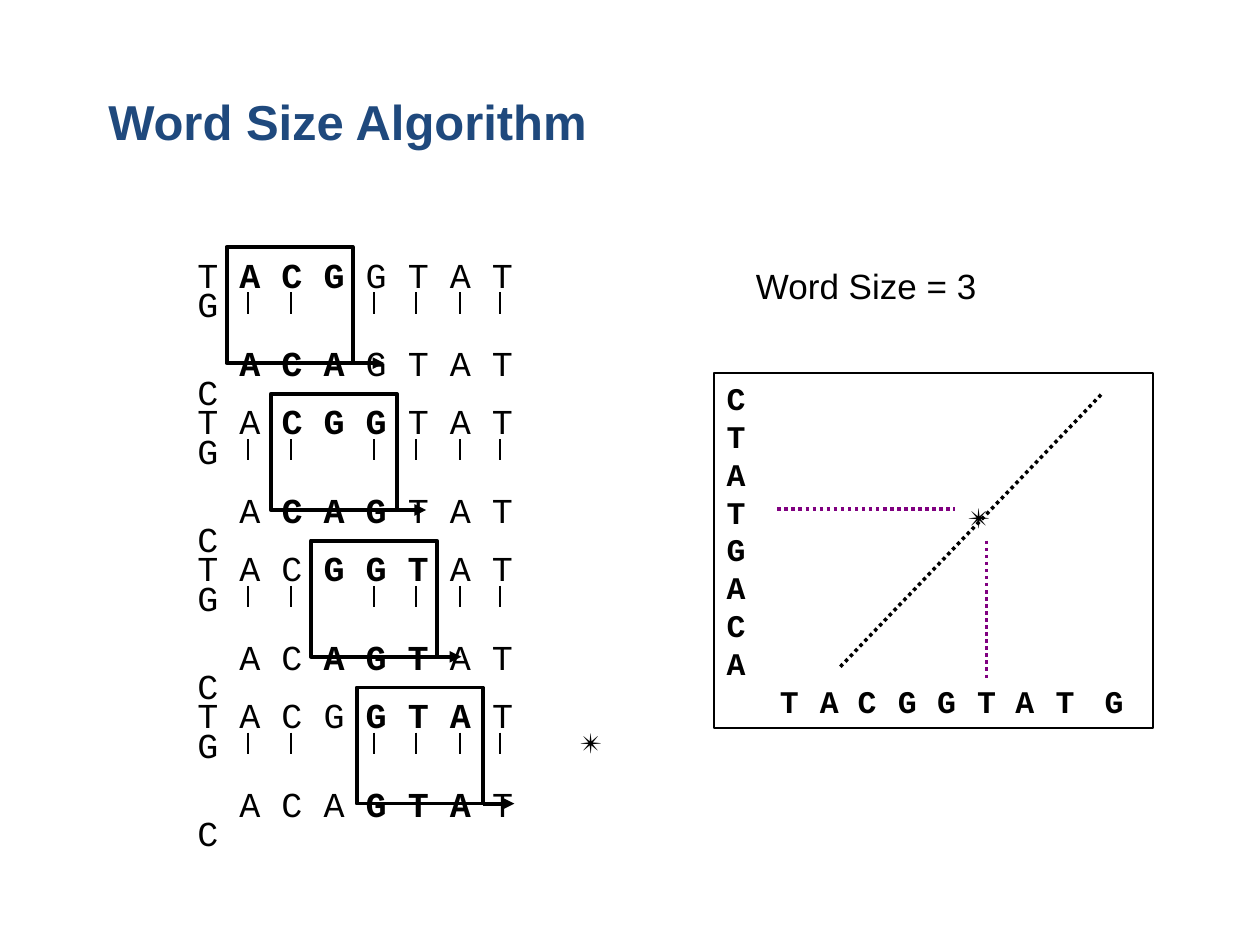
"""Build the Word Size Algorithm slide: sliding windows and a dot plot."""
from lxml.etree import SubElement
from pptx import Presentation
from pptx.dml.color import RGBColor
from pptx.enum.dml import MSO_LINE_DASH_STYLE as Dash
from pptx.enum.shapes import MSO_CONNECTOR as Link, MSO_SHAPE as Shape
from pptx.enum.text import MSO_ANCHOR as Anchor, PP_ALIGN as Align
from pptx.oxml.ns import qn
from pptx.util import Cm, Pt

TITLE = "Word Size Algorithm"
NOTE = "Word Size = 3"
TOP, LOW = "TACGGTATG", "ACAGTATC"
SIDE = "CTATGACA"
STAR = "✴"
MONO, SANS = "Courier New", "Arial"
BLACK, BLUE, PLUM = "000000", "1F497D", "800080"
SIZE = 3
PITCH = 2.96
WINDOWS = [(4.57, 7.11), (5.46, 7.95), (6.27, 8.66), (7.19, 9.73)]
TICKS = [5, 5.87, 7.54, 8.38, 9.27, 10.08]
STOPS = [1.07, 1.88, 2.64, 3.45, 4.24, 5.05, 5.82, 6.63]
DOTS = [((16.94, 13.44), (22.23, 7.92), BLACK),
        ((15.67, 10.26), (19.25, 10.26), PLUM),
        ((19.89, 10.9), (19.89, 13.67), PLUM)]
STARS = [(11.43, 14.5), (19.25, 9.96)]

deck = Presentation()
deck.slide_width, deck.slide_height = Cm(25.4), Cm(19.05)
slide = deck.slides.add_slide(deck.slide_layouts[5])
shapes = slide.shapes


def paint(fmt, color):
    fmt.rgb = RGBColor.from_string(color)


def write(par, text, size, face=MONO, color=BLACK, bold=False):
    run = par.add_run()
    run.text = text
    font = run.font
    font.size, font.name, font.bold = Pt(size), face, bold
    paint(font.color, color)


def label(x, y, w, h):
    frame = shapes.add_textbox(Cm(x), Cm(y), Cm(w), Cm(h)).text_frame
    frame.word_wrap = True
    return frame


def frame_box(x, y, w, h, width):
    box = shapes.add_shape(Shape.RECTANGLE, Cm(x), Cm(y), Cm(w), Cm(h))
    box.shadow.inherit = False
    box.fill.background()
    paint(box.line.color, BLACK)
    box.line.width = Pt(width)
    return box


def rule(start, end, width, color=BLACK, dash=None, arrow=False):
    link = shapes.add_connector(Link.STRAIGHT, *map(Cm, start + end))
    paint(link.line.color, color)
    link.line.width = Pt(width)
    if dash:
        link.line.dash_style = dash
    props = link._element.spPr
    if arrow:
        SubElement(props.find(qn("a:ln")), qn("a:tailEnd"), type="triangle")
    SubElement(props, qn("a:effectLst"))


def spell(par, letters, first, lead=""):
    last = first + SIZE
    par.line_spacing = 0.7
    head = lead + " ".join(letters[:first])
    word = " " + " ".join(letters[first:last]) + " "
    for text, bold in ((head, False), (word, True), (" ".join(letters[last:]), False)):
        write(par, text, 20, bold=bold)


def align_row(step, left, tip):
    drop = step * PITCH
    text = label(3.73, 5.21 + drop, 7.7, 2.03)
    spell(text.paragraphs[0], TOP, step + 1)
    low = text.add_paragraph()
    low.space_before = Pt(16.9)
    spell(low, LOW, step, "  " if step else " ")
    frame_box(left, 4.98 + drop, 2.54, 2.34, 2.25)
    for x in TICKS:
        rule((x, 5.89 + drop), (x, 6.32 + drop), 1)
    rule((tip, 7.32 + drop), (tip + 0.64, 7.32 + drop), 2.25, arrow=True)


def dot_plot():
    text = frame_box(14.4, 7.52, 8.84, 7.16, 1).text_frame
    text.word_wrap = True
    text.vertical_anchor = Anchor.TOP
    par = text.paragraphs[0]
    par.alignment = Align.LEFT
    tabs = SubElement(par._p.get_or_add_pPr(), qn("a:tabLst"))
    for stop in STOPS:
        SubElement(tabs, qn("a:tab"), pos=str(int(Cm(stop))), algn="l")
    for base in SIDE:
        write(par, base, 18, bold=True)
        par.add_line_break()
    write(par, "".join("\t" + base for base in TOP), 18, bold=True)


def main():
    head = shapes.title
    head.left, head.top, head.width, head.height = map(Cm, (1.93, 0.84, 21.59, 3.18))
    head.text_frame.vertical_anchor = Anchor.MIDDLE
    par = head.text_frame.paragraphs[0]
    par.alignment = Align.LEFT
    write(par, TITLE, 28, SANS, BLUE, True)
    for step, (left, tip) in enumerate(WINDOWS):
        align_row(step, left, tip)
    dot_plot()
    write(label(14.99, 5.21, 5.26, 1.09).paragraphs[0], NOTE, 20, SANS)
    for start, end, color in DOTS:
        rule(start, end, 2, color, Dash.ROUND_DOT)
    for x, y in STARS:
        write(label(x, y, 1.02, 0.94).paragraphs[0], STAR, 16)
    deck.save("out.pptx")


if __name__ == "__main__":
    main()
